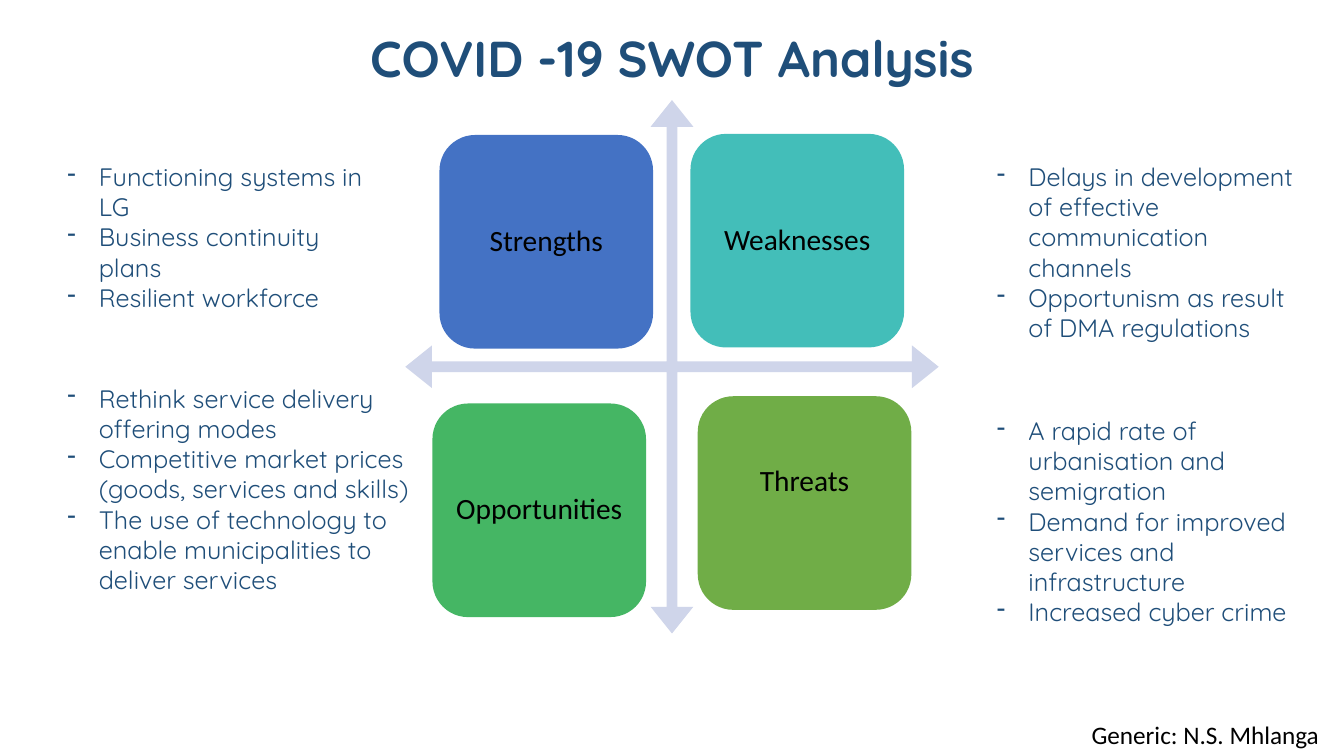
from lxml import etree
from pptx import Presentation
from pptx import util as u
from pptx.dml.color import RGBColor
from pptx.enum import shapes, text
from pptx.oxml.ns import qn

COLOURS = {
    "heading": "1F4E79",
    "label": "000000",
    "arrow": "CFD5EA",
    "strengths": "4472C4",
    "weaknesses": "43BEB9",
    "opportunities": "45B664",
    "threats": "70AD47",
}
TILE_SIZE = 152.6
LIST_INDENT = 22.5
TILES = [
    ("Strengths", 313.9, 96.4, 0),
    ("Weaknesses", 493.2, 95.6, 0),
    ("Opportunities", 308.9, 288.2, 0),
    ("Threats", 498.4, 283, 30.4),
]
LISTS = [
    ((41, 111.6, 234, 138), [
        "Functioning systems in LG",
        "Business continuity plans",
        "Resilient workforce",
    ]),
    ((705, 111.6, 234, 181), [
        "Delays in development of effective communication channels",
        "Opportunism as result of DMA regulations",
    ]),
    ((41, 270, 258, 225), [
        "Rethink service delivery offering modes",
        "Competitive market prices (goods, services and skills)",
        "The use of technology to enable municipalities to deliver services",
    ]),
    ((705, 293, 234, 160), [
        "A rapid rate of urbanisation and semigration",
        "Demand for improved services and infrastructure",
        "Increased cyber crime",
    ]),
]


def colour(name):
    """Return the named colour."""
    return RGBColor.from_string(COLOURS[name])


def points(*lengths):
    """Convert lengths in points."""
    return [u.Pt(length) for length in lengths]


def format_paragraph(paragraph, font_name, size, colour_name, bold=False):
    """Set the font of every run in a paragraph."""
    for run in paragraph.runs:
        run.font.name = font_name
        run.font.size = u.Pt(size)
        run.font.bold = bold
        run.font.color.rgb = colour(colour_name)


def add_text(slide, box, lines):
    """Add a wrapping text box with one paragraph per line."""
    shape = slide.shapes.add_textbox(*points(*box))
    shape.text_frame.word_wrap = True
    shape.text_frame.text = "\n".join(lines)
    return shape.text_frame


def add_filled_shape(slide, kind, box, colour_name):
    """Add a flat preset shape without an outline."""
    shape = slide.shapes.add_shape(kind, *points(*box))
    shape.shadow.inherit = False
    shape.fill.solid()
    shape.fill.fore_color.rgb = colour(colour_name)
    shape.line.fill.background()
    return shape


def add_title(slide, box):
    """Add the centred slide title."""
    frame = add_text(slide, box, ["COVID -19 SWOT Analysis"])
    frame.vertical_anchor = text.MSO_ANCHOR.MIDDLE
    paragraph = frame.paragraphs[0]
    paragraph.alignment = text.PP_ALIGN.CENTER
    paragraph.line_spacing = 0.9
    format_paragraph(paragraph, "Quicksand", 36, "heading", bold=True)


def add_axes(slide, box):
    """Add the four-way arrow behind the tiles."""
    arrow = add_filled_shape(slide, shapes.MSO_SHAPE.QUAD_ARROW, box, "arrow")
    for index, value in enumerate((0.02, 0.04, 0.05)):
        arrow.adjustments[index] = value


def add_tile(slide, box, label, lift):
    """Add a rounded tile whose label is raised by half the lift."""
    tile = add_filled_shape(slide, shapes.MSO_SHAPE.ROUNDED_RECTANGLE, box, label.lower())
    frame = tile.text_frame
    frame.margin_left = frame.margin_right = frame.margin_top = u.Pt(6.5)
    frame.margin_bottom = u.Pt(6.5 + lift)
    frame.word_wrap = True
    frame.vertical_anchor = text.MSO_ANCHOR.MIDDLE
    frame.text = label
    paragraph = frame.paragraphs[0]
    paragraph.alignment = text.PP_ALIGN.CENTER
    paragraph.line_spacing = 0.9
    format_paragraph(paragraph, "Calibri", 21, "label")


def add_list(slide, box, items):
    """Add a dashed list with hanging indents."""
    for paragraph in add_text(slide, box, items).paragraphs:
        properties = paragraph._p.get_or_add_pPr()
        properties.set("marL", str(u.Pt(LIST_INDENT)))
        properties.set("indent", str(u.Pt(-LIST_INDENT)))
        etree.SubElement(properties, qn("a:buChar"), char="-")
        format_paragraph(paragraph, "Quicksand", 18, "heading")


def add_credit(slide, box):
    """Add the author line."""
    frame = add_text(slide, box, ["Generic: N.S. Mhlanga"])
    format_paragraph(frame.paragraphs[0], "Calibri", 18, "label")


def main():
    """Build and save the presentation."""
    presentation = Presentation()
    presentation.slide_width, presentation.slide_height = points(960, 540)
    slide = presentation.slides.add_slide(presentation.slide_layouts[6])
    add_title(slide, (66, 15.8, 828, 55.4))
    add_axes(slide, (289.5, 71.5, 381, 381))
    for label, left, top, lift in TILES:
        add_tile(slide, (left, top, TILE_SIZE, TILE_SIZE), label, lift)
    for box, items in LISTS:
        add_list(slide, box, items)
    add_credit(slide, (772.6, 510, 187.4, 29))
    presentation.save("out.pptx")


if __name__ == "__main__":
    main()
